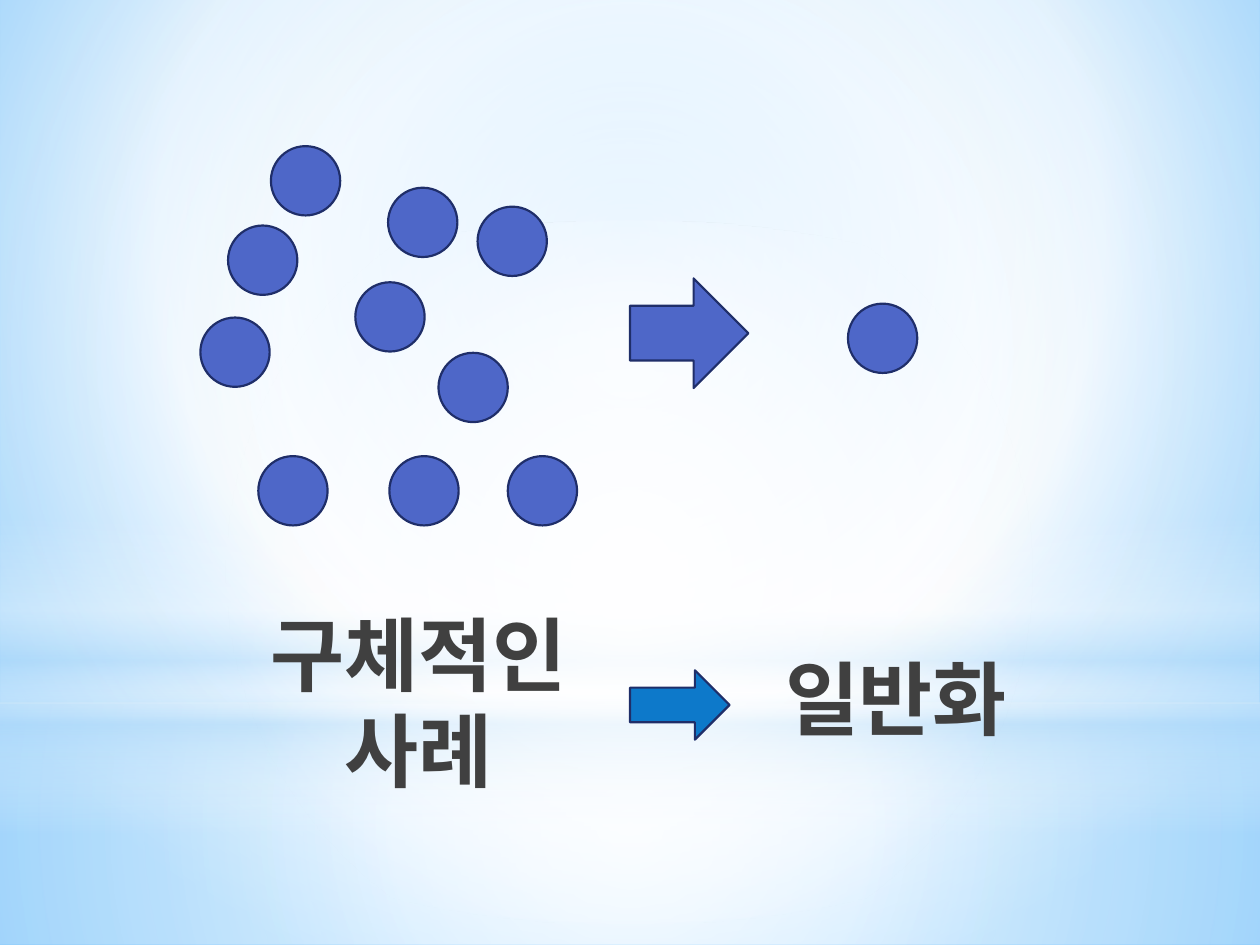
from pptx import Presentation
from pptx.dml.color import RGBColor as RGB
from pptx.enum.shapes import MSO_SHAPE as Kind
from pptx.enum.text import MSO_ANCHOR as Anchor, PP_ALIGN as Align
from pptx.oxml import parse_xml
from pptx.oxml.ns import nsdecls, qn
from pptx.util import Inches, Pt

INDIGO = RGB(0x4E, 0x67, 0xC8)
NAVY = RGB(0x1F, 0x2E, 0x69)
BLUE = RGB(0x0D, 0x79, 0xCA)
GREY = RGB(0x40, 0x40, 0x40)
WHITE = RGB(0xFF, 0xFF, 0xFF)
PALE = RGB(0xB4, 0xDC, 0xFA)
SKY = RGB(0x9E, 0xD5, 0xFF)
DEEP = RGB(0x5B, 0xB9, 0xFF)

FONT = "Roboto"
DOT = 0.55
CASES = [(1.81, 1.79), (3.08, 1.49), (2.05, 3.62), (2.82, 2.24), (3.48, 2.8),
         (3.79, 1.64), (3.09, 3.62), (1.59, 2.52), (2.15, 1.16), (4.03, 3.62)]
RULE = (6.73, 2.41)

CENTER = (50, 50, 50, 50)
# Kind, box, stops (position, colour, opacity), focus; no focus means top to bottom
GLOWS = [
    (Kind.RECTANGLE, (0, 5.58, 10, 1.92),
     [(0, WHITE, 91), (37, WHITE, 76), (100, PALE, 79)], CENTER),
    (Kind.RECTANGLE, (0, 0, 10, 5.58),
     [(0, WHITE, 89), (48, WHITE, 62), (100, PALE, 79)], CENTER),
    (Kind.RECTANGLE, (0, 4.12, 10, 2.5),
     [(0, WHITE, 0), (29, WHITE, 30), (45, PALE, 40),
      (55, WHITE, 26), (65, PALE, 60), (100, WHITE, 0)], None),
    (Kind.OVAL, (0, 1.75, 10, 5.58),
     [(0, WHITE, 100), (56, WHITE, 0)], CENTER),
]


def blend(owner, stops, focus):
    """Replace the solid fill inside an XML element by a gradient."""
    marks = "".join(
        f'<a:gs pos="{pos * 1000}"><a:srgbClr val="{color}">'
        f'<a:alpha val="{alpha * 1000}"/></a:srgbClr></a:gs>'
        for pos, color, alpha in stops)
    if focus:
        sides = " ".join(f'{side}="{val * 1000}"' for side, val in zip("ltrb", focus))
        path = f'<a:path path="circle"><a:fillToRect {sides}/></a:path>'
    else:
        path = '<a:lin ang="5400000" scaled="0"/>'
    grad = parse_xml(f'<a:gradFill {nsdecls("a")} rotWithShape="1">'
                     f'<a:gsLst>{marks}</a:gsLst>{path}</a:gradFill>')
    owner.replace(owner.find(qn("a:solidFill")), grad)


def add_shape(slide, kind, box, fill, line=None):
    shape = slide.shapes.add_shape(kind, *map(Inches, box))
    shape.shadow.inherit = False
    shape.fill.solid()
    shape.fill.fore_color.rgb = fill
    if line is None:
        shape.line.fill.background()
    else:
        shape.line.color.rgb = line
        shape.line.width = Pt(1.25)
    return shape


def add_glow(slide, kind, box, stops, focus):
    shape = add_shape(slide, kind, box, WHITE)
    blend(shape._element.spPr, stops, focus)


def add_dot(slide, spot):
    add_shape(slide, Kind.OVAL, (*spot, DOT, DOT), INDIGO, NAVY)


def put_text(shape, text, box, align, anchor, left=0.1, right=0.1):
    shape.left, shape.top, shape.width, shape.height = map(Inches, box)
    frame = shape.text_frame
    frame.word_wrap = True
    frame.vertical_anchor = anchor
    frame.margin_left, frame.margin_right = Inches(left), Inches(right)
    frame.margin_top = frame.margin_bottom = Inches(0.05)
    para = frame.paragraphs[0]
    para.alignment = align
    para.line_spacing = 1.0
    run = para.add_run()
    run.text = text
    font = run.font
    font.name, font.size, font.bold = FONT, Pt(46), True
    font.color.rgb = GREY
    east = parse_xml(f'<a:ea {nsdecls("a")} typeface="{FONT}"/>')
    run._r.rPr.find(qn("a:latin")).addnext(east)


def main():
    deck = Presentation()
    deck.slide_width, deck.slide_height = Inches(10), Inches(7.5)
    slide = deck.slides.add_slide(deck.slide_layouts[5])

    slide.background.fill.solid()
    blend(slide._element.find(".//" + qn("p:bgPr")),
          [(0, SKY, 100), (60, WHITE, 100), (100, DEEP, 100)], (20, 10, 20, 60))
    for glow in GLOWS:
        add_glow(slide, *glow)

    title = slide.shapes.title
    slide.shapes._spTree.append(title._element)  # in front of the glows
    put_text(title, "구체적인 사례", (1.14, 4.78, 3.44, 1.57),
             Align.CENTER, Anchor.MIDDLE, left=0.92, right=0)

    for spot in CASES:
        add_dot(slide, spot)
    add_shape(slide, Kind.RIGHT_ARROW, (5, 2.21, 0.94, 0.87), INDIGO, NAVY)
    add_dot(slide, RULE)

    label = slide.shapes.add_textbox(0, 0, 0, 0)
    put_text(label, "일반화", (5.94, 5.1, 2.5, 1.18),
             Align.RIGHT, Anchor.TOP, right=0.45)
    add_shape(slide, Kind.RIGHT_ARROW, (5, 5.32, 0.79, 0.55), BLUE, NAVY)

    deck.save("out.pptx")


if __name__ == "__main__":
    main()
